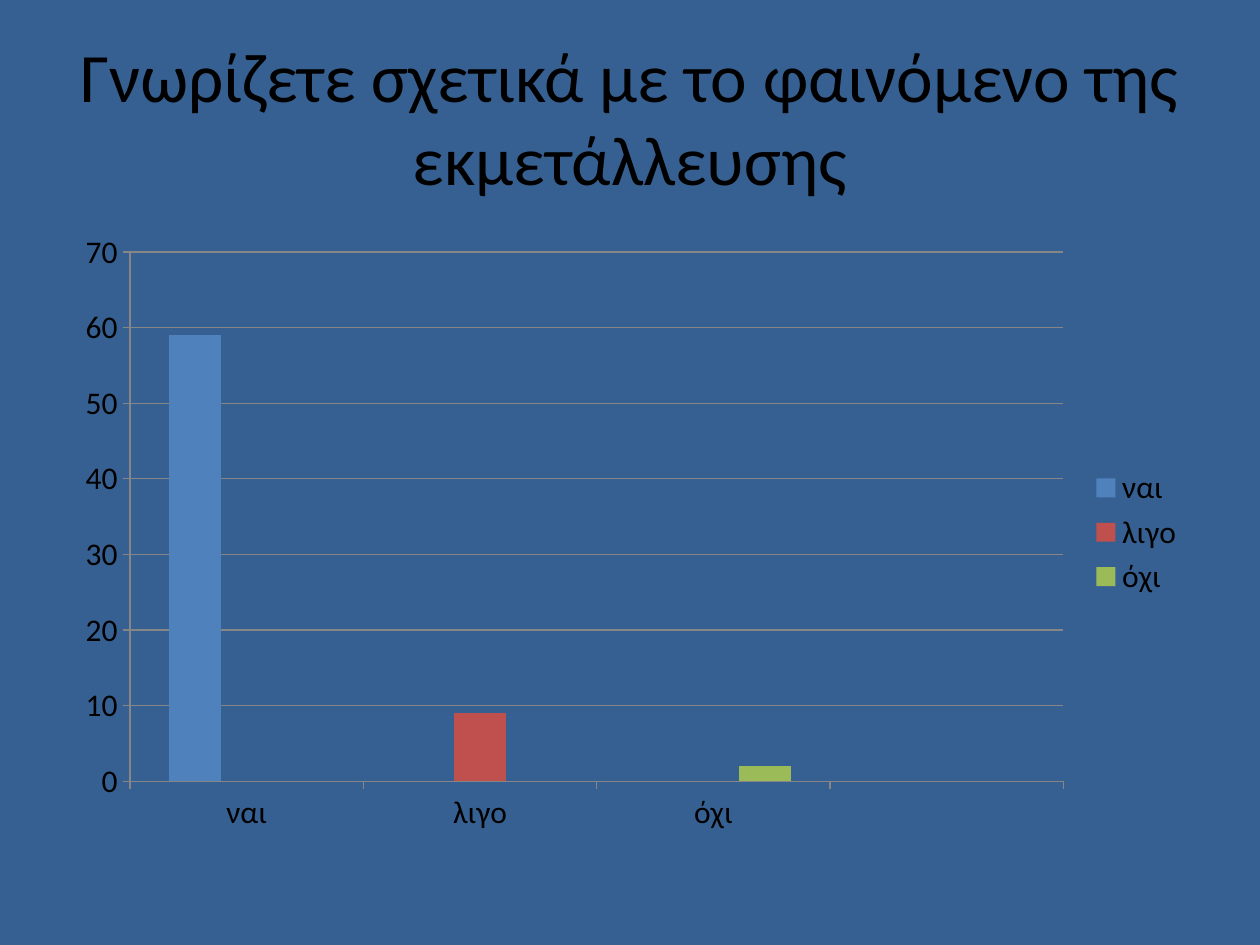
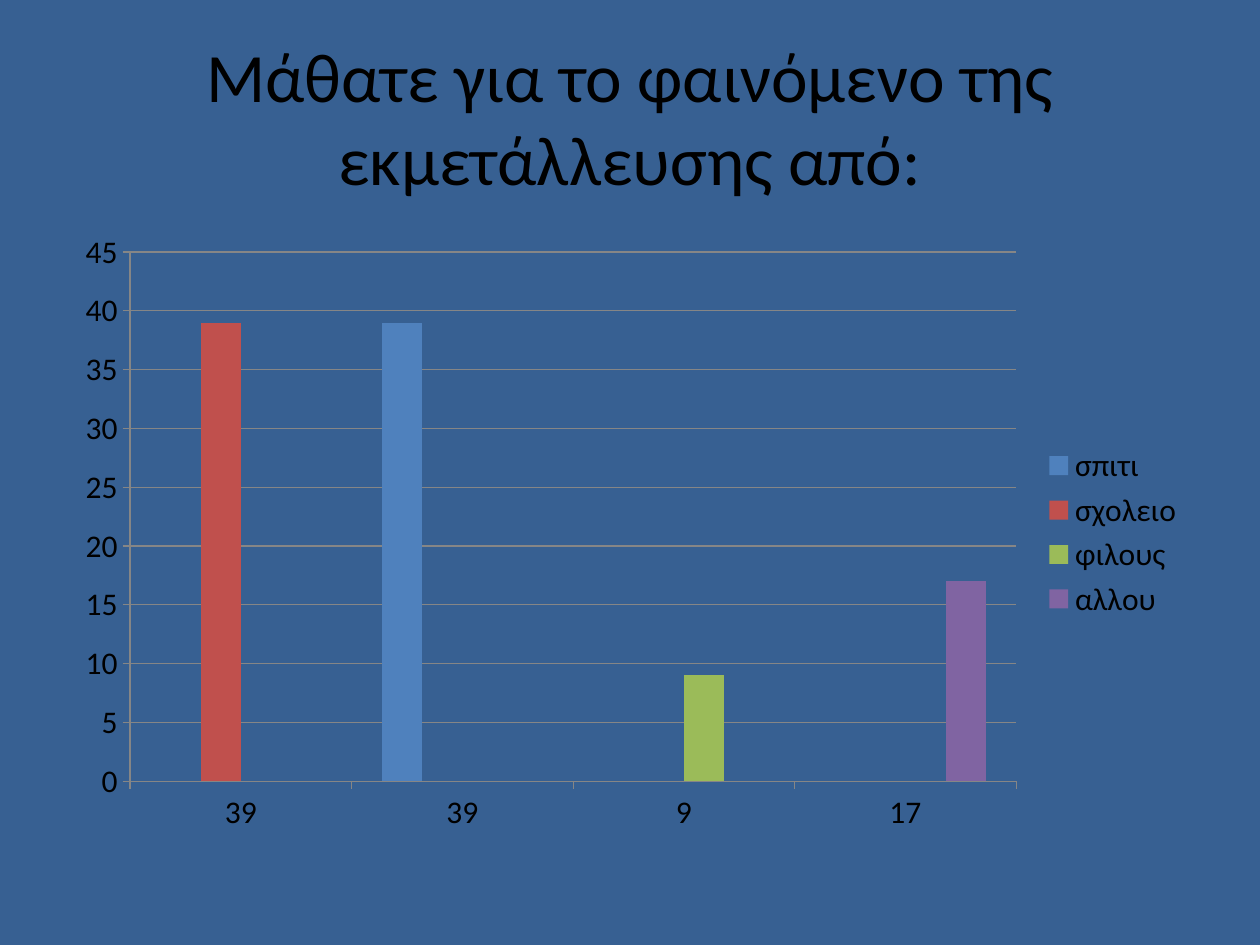
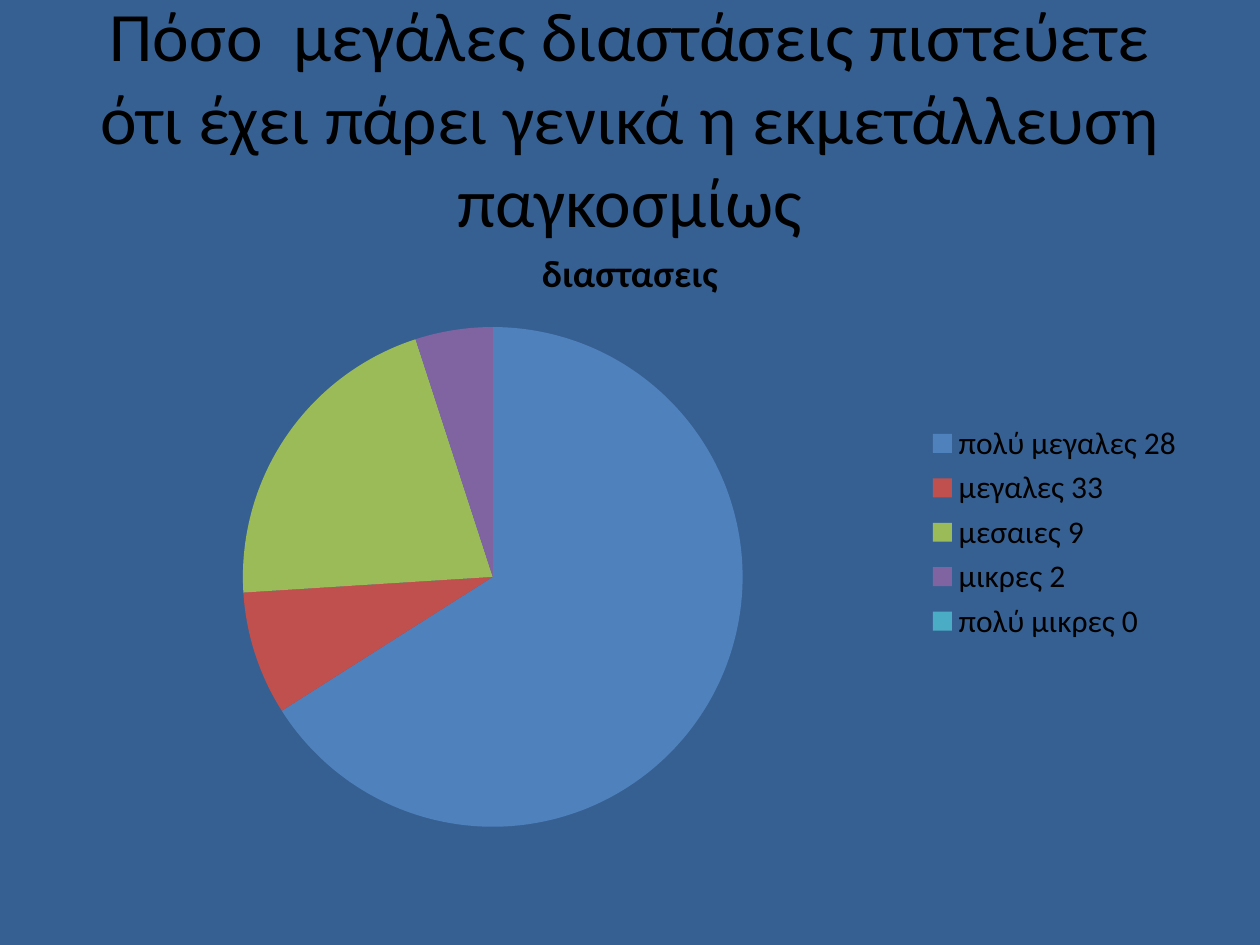
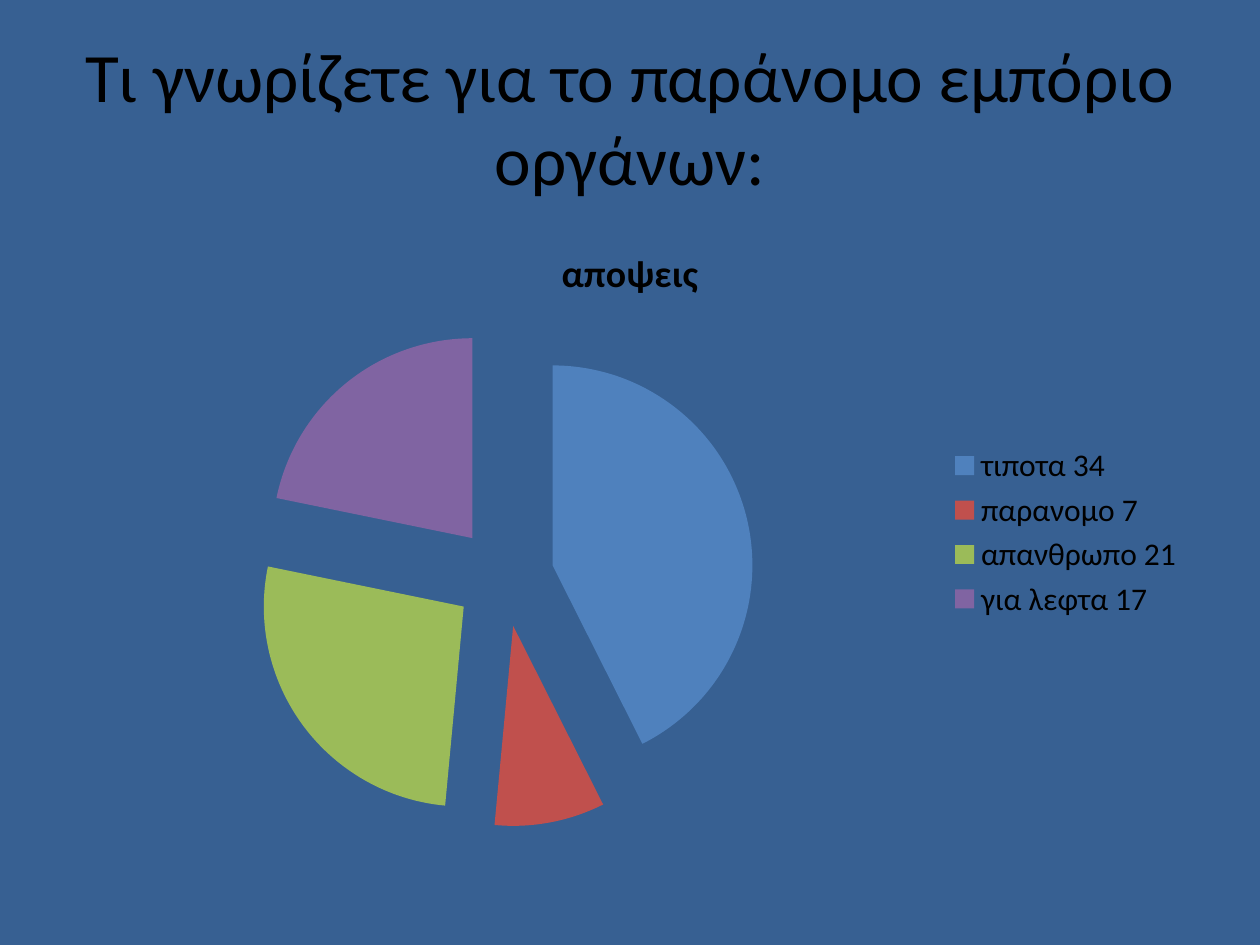
from dataclasses import dataclass

from lxml.etree import Element
from pptx import Presentation
from pptx.chart.chart import Chart
from pptx.chart.data import CategoryChartData
from pptx.dml.color import RGBColor
from pptx.enum.chart import XL_CHART_TYPE, XL_LEGEND_POSITION, XL_TICK_MARK
from pptx.enum.text import MSO_ANCHOR, PP_ALIGN
from pptx.oxml.ns import qn
from pptx.slide import Slide
from pptx.text.text import TextFrame
from pptx.util import Emu, Pt

EMU_PER_PX = 9144
FONT = "Calibri"
BACKGROUND = "376092"
TEXT = "000000"
AXIS = "868686"
BLUE, RED, GREEN, PURPLE, AQUA = "4F81BD", "C0504D", "9BBB59", "8064A2", "4BACC6"
PALETTE = (BLUE, RED, GREEN, PURPLE, AQUA)
BAR_SLOTS = 4


@dataclass(frozen=True)
class Box:
    left: int
    top: int
    width: int
    height: int

    def emu(self) -> tuple[Emu, Emu, Emu, Emu]:
        return px(self.left), px(self.top), px(self.width), px(self.height)


@dataclass(frozen=True)
class Answer:
    name: str
    value: int
    slot: int


@dataclass(frozen=True)
class BarQuestion:
    title: str
    categories: tuple[str, ...]
    answers: tuple[Answer, ...]


@dataclass(frozen=True)
class PieQuestion:
    title: str
    chart_title: str
    shares: dict[str, int]
    explosion: int = 0


TITLE_BOX = Box(50, 30, 900, 125)
CHART_BOX = Box(50, 175, 900, 495)

QUESTIONS = (
    BarQuestion(
        "Γνωρίζετε σχετικά με το φαινόμενο της εκμετάλλευσης",
        ("ναι", "λιγο", "όχι"),
        (Answer("ναι", 59, 0), Answer("λιγο", 9, 1), Answer("όχι", 2, 2)),
    ),
    BarQuestion(
        "Μάθατε για το φαινόμενο της εκμετάλλευσης από:",
        ("39", "39", "9", "17"),
        (
            Answer("σπιτι", 39, 1),
            Answer("σχολειο", 39, 0),
            Answer("φιλους", 9, 2),
            Answer("αλλου", 17, 3),
        ),
    ),
    PieQuestion(
        "Πόσο  μεγάλες διαστάσεις πιστεύετε ότι έχει πάρει γενικά η εκμετάλλευση παγκοσμίως",
        "διαστασεις",
        {
            "πολύ μεγαλες 28": 66,
            "μεγαλες 33": 8,
            "μεσαιες 9": 21,
            "μικρες 2": 5,
            "πολύ μικρες 0": 0,
        },
    ),
    PieQuestion(
        "Τι γνωρίζετε για το παράνομο εμπόριο οργάνων:",
        "αποψεις",
        {"τιποτα 34": 43, "παρανομο 7": 9, "απανθρωπο 21": 27, "για λεφτα 17": 22},
        explosion=25,
    ),
)


def px(length: int) -> Emu:
    return Emu(length * EMU_PER_PX)


def color(value: str) -> RGBColor:
    return RGBColor.from_string(value)


def set_font(font, size: float, bold: bool = False) -> None:
    font.name = FONT
    font.size = Pt(size)
    font.bold = bold
    font.color.rgb = color(TEXT)


def write_text(frame: TextFrame, text: str, *, size: float, bold: bool = False) -> None:
    paragraph = frame.paragraphs[0]
    paragraph.alignment = PP_ALIGN.CENTER
    run = paragraph.add_run()
    run.text = text
    set_font(run.font, size, bold)


def fill_solid(fill, value: str) -> None:
    fill.solid()
    fill.fore_color.rgb = color(value)


def add_title(slide: Slide, text: str) -> None:
    frame = slide.shapes.add_textbox(*TITLE_BOX.emu()).text_frame
    frame.word_wrap = True
    frame.vertical_anchor = MSO_ANCHOR.MIDDLE
    write_text(frame, text, size=39.6)


def add_chart(slide: Slide, kind: XL_CHART_TYPE, data: CategoryChartData) -> Chart:
    chart = slide.shapes.add_chart(kind, *CHART_BOX.emu(), data).chart
    set_font(chart.font, 18)
    chart.has_title = False
    chart.has_legend = True
    chart.legend.position = XL_LEGEND_POSITION.RIGHT
    chart.legend.include_in_layout = False
    return chart


def style_line(line) -> None:
    line.color.rgb = color(AXIS)
    line.width = Pt(0.75)


def add_bars(slide: Slide, question: BarQuestion) -> None:
    data = CategoryChartData()
    data.categories = question.categories
    for answer in question.answers:
        values = [answer.value if slot == answer.slot else None for slot in range(BAR_SLOTS)]
        data.add_series(answer.name, values)
    chart = add_chart(slide, XL_CHART_TYPE.COLUMN_CLUSTERED, data)
    plot = chart.plots[0]
    plot.gap_width = 150
    plot.vary_by_categories = False
    for series, value in zip(plot.series, PALETTE):
        series.invert_if_negative = False
        fill_solid(series.format.fill, value)
    for axis in (chart.category_axis, chart.value_axis):
        axis.major_tick_mark = XL_TICK_MARK.OUTSIDE
        axis.minor_tick_mark = XL_TICK_MARK.NONE
        style_line(axis.format.line)
    chart.value_axis.has_major_gridlines = True
    style_line(chart.value_axis.major_gridlines.format.line)


def add_pie(slide: Slide, question: PieQuestion) -> None:
    data = CategoryChartData()
    data.categories = question.shares.keys()
    data.add_series(question.chart_title, question.shares.values())
    chart = add_chart(slide, XL_CHART_TYPE.PIE, data)
    chart.has_title = True
    chart.chart_title.include_in_layout = False
    write_text(chart.chart_title.text_frame, question.chart_title, size=21.6, bold=True)
    plot = chart.plots[0]
    plot.vary_by_categories = True
    series = plot.series[0]
    for index, value in enumerate(PALETTE[: len(question.shares)]):
        fill_solid(series.points[index].format.fill, value)
    if question.explosion:
        explosion = Element(qn("c:explosion"), val=str(question.explosion))
        series._element.find(qn("c:dPt")).addprevious(explosion)


def main() -> None:
    presentation = Presentation()
    presentation.slide_width = px(1000)
    presentation.slide_height = px(750)
    for question in QUESTIONS:
        slide = presentation.slides.add_slide(presentation.slide_layouts[6])
        fill_solid(slide.background.fill, BACKGROUND)
        add_title(slide, question.title)
        if isinstance(question, BarQuestion):
            add_bars(slide, question)
        else:
            add_pie(slide, question)
    presentation.save("out.pptx")


if __name__ == "__main__":
    main()
